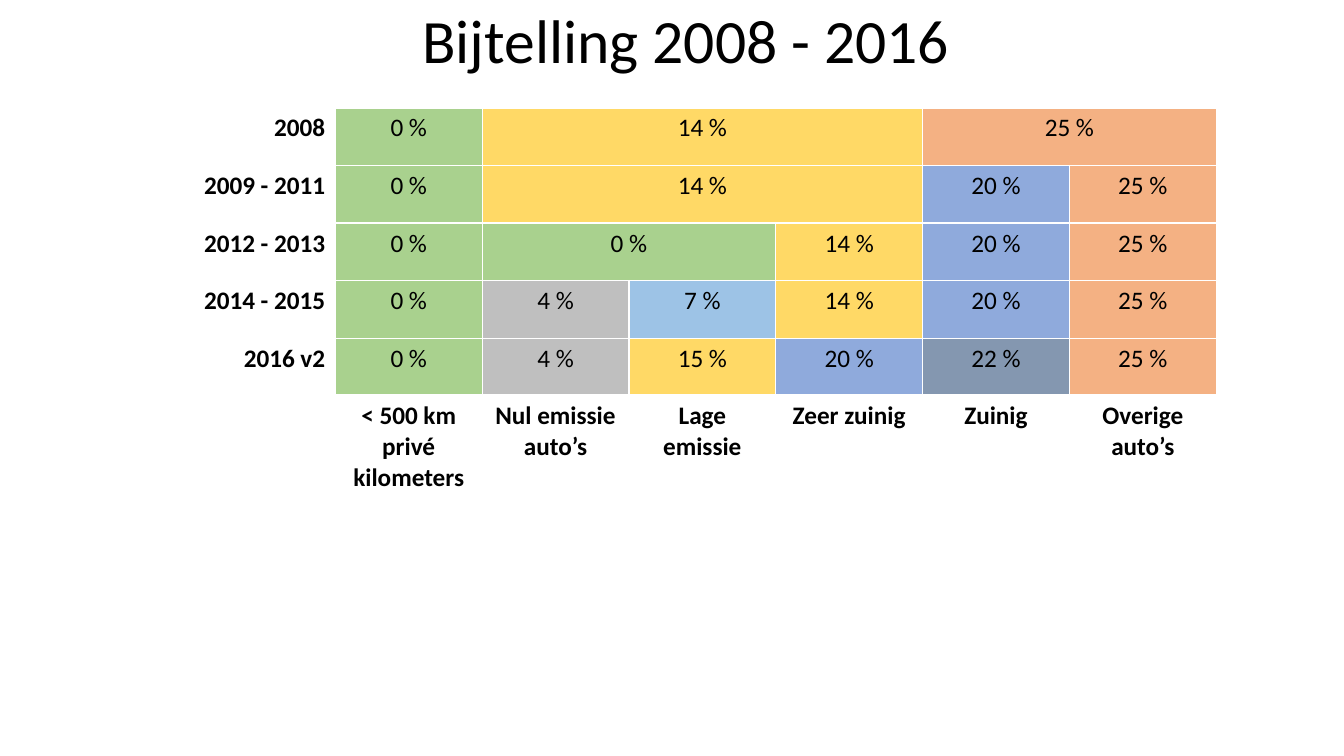
from lxml.etree import SubElement
from pptx import Presentation
from pptx.dml.color import RGBColor
from pptx.enum.text import MSO_ANCHOR as Anchor, PP_ALIGN as Align
from pptx.oxml.ns import qn
from pptx.util import Cm, Pt

BLACK = RGBColor(0x00, 0x00, 0x00)
WHITE = RGBColor(0xFF, 0xFF, 0xFF)
GREEN = RGBColor(0xA9, 0xD1, 0x8E)
YELLOW = RGBColor(0xFF, 0xD9, 0x66)
ORANGE = RGBColor(0xF4, 0xB1, 0x83)
BLUE = RGBColor(0x8F, 0xAA, 0xDC)
SKY = RGBColor(0x9D, 0xC3, 0xE6)
SLATE = RGBColor(0x84, 0x97, 0xB0)
GREY = RGBColor(0xBF, 0xBF, 0xBF)

RATE_COLORS = {0: GREEN, 4: GREY, 7: SKY, 14: YELLOW, 15: YELLOW,
               20: BLUE, 22: SLATE, 25: ORANGE}
PERIODS = [
    ("2008", [(0, 1), (14, 3), (25, 2)]),
    ("2009 - 2011", [(0, 1), (14, 3), (20, 1), (25, 1)]),
    ("2012 - 2013", [(0, 1), (0, 2), (14, 1), (20, 1), (25, 1)]),
    ("2014 - 2015", [(0, 1), (4, 1), (7, 1), (14, 1), (20, 1), (25, 1)]),
    ("2016 v2", [(0, 1), (4, 1), (15, 1), (20, 1), (22, 1), (25, 1)]),
]
CATEGORIES = ["< 500 km privé kilometers", "Nul emissie auto’s", "Lage emissie",
              "Zeer zuinig", "Zuinig", "Overige auto’s"]


def write(frame, text, size=18, bold=False, align=Align.CENTER, spacing=1.0):
    para = frame.paragraphs[0]
    para.alignment = align
    para.line_spacing = spacing
    span = para.add_run()
    span.text = text
    span.font.name = "Calibri"
    span.font.size = Pt(size)
    span.font.bold = bold
    span.font.color.rgb = BLACK


def draw_borders(cell, top):
    props = cell._tc.get_or_add_tcPr()
    for side, width in (("L", 1), ("R", 1), ("T", top), ("B", 1)):
        line = SubElement(props, qn(f"a:ln{side}"), w=str(Pt(width)))
        fill = SubElement(line, qn("a:solidFill"))
        SubElement(fill, qn("a:srgbClr"), val=str(WHITE))


deck = Presentation()
deck.slide_width = Cm(33.87)
deck.slide_height = Cm(19.05)
page = deck.slides.add_slide(deck.slide_layouts[5])

title = page.shapes.title
title.left, title.top, title.width, title.height = Cm(10.39), Cm(-0.74), Cm(22.99), Cm(3.68)
title.text_frame.vertical_anchor = Anchor.MIDDLE
write(title.text_frame, "Bijtelling 2008 - 2016", size=44, align=Align.LEFT, spacing=0.9)

last = len(PERIODS)
table = page.shapes.add_table(last + 1, len(CATEGORIES) + 1,
                              Cm(4.75), Cm(2.72), Cm(25.88), Cm(9.8)).table
table.first_row = False
table.horz_banding = False
for column in table.columns:
    column.width = Cm(3.7)
for index, row in enumerate(table.rows):
    row.height = Cm(2.55) if index == last else Cm(1.45)
    for cell in row.cells:
        draw_borders(cell, top=3 if index == last else 1)
        cell.fill.background()

for index, (period, rates) in enumerate(PERIODS):
    write(table.cell(index, 0).text_frame, period, bold=True, align=Align.RIGHT)
    column = 1
    for rate, width in rates:
        cell = table.cell(index, column)
        if width > 1:
            cell.merge(table.cell(index, column + width - 1))
        cell.fill.solid()
        cell.fill.fore_color.rgb = RATE_COLORS[rate]
        write(cell.text_frame, f"{rate} %")
        column += width

for column, category in enumerate(CATEGORIES, start=1):
    write(table.cell(last, column).text_frame, category, bold=True)

deck.save("out.pptx")
